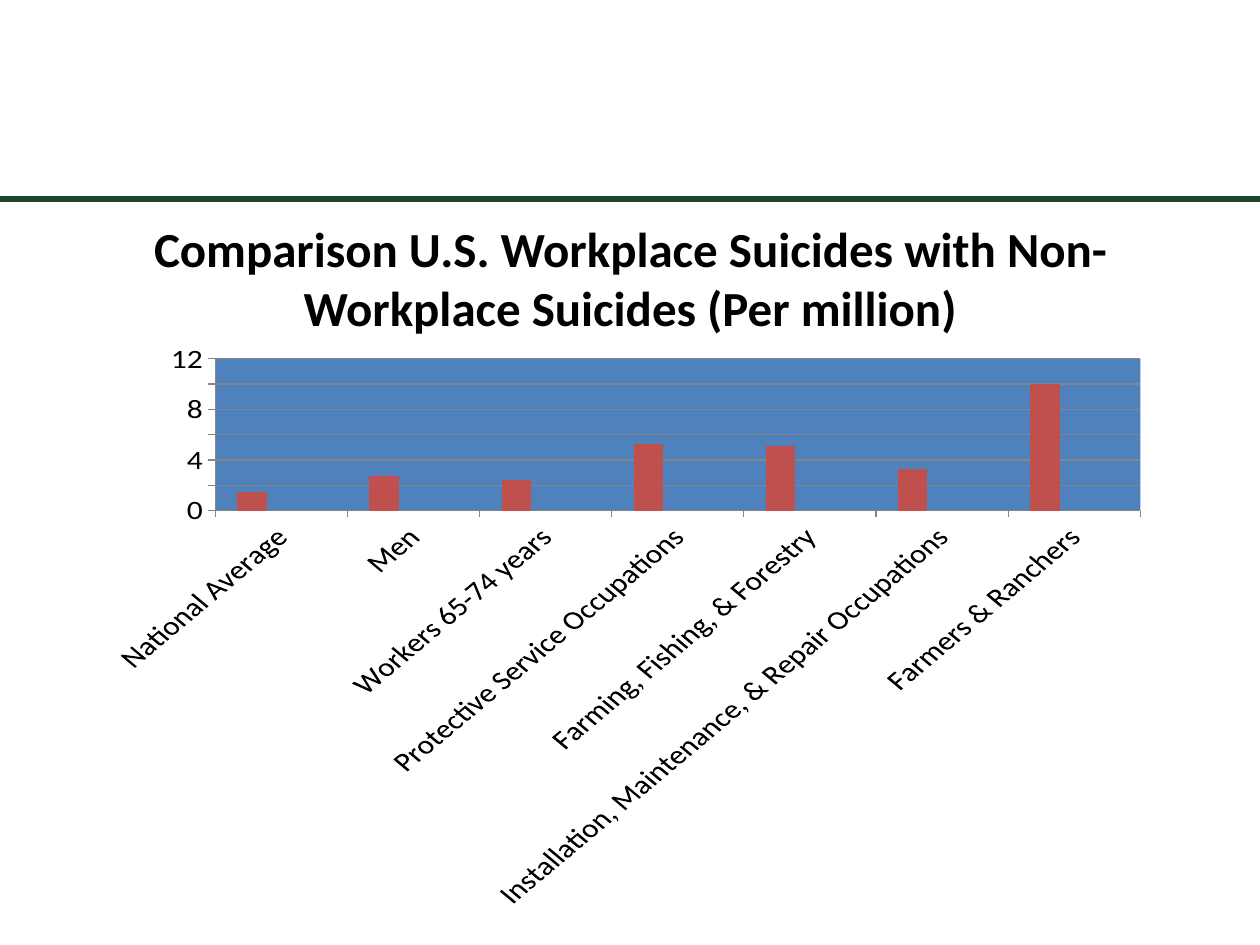
from pptx import Presentation
from pptx.chart.data import CategoryChartData
from pptx.dml.color import RGBColor
from pptx.enum.chart import XL_CHART_TYPE, XL_TICK_MARK
from pptx.enum.shapes import MSO_CONNECTOR
from pptx.enum.text import MSO_ANCHOR, PP_ALIGN
from pptx.oxml import parse_xml
from pptx.oxml.ns import nsdecls
from pptx.util import Cm, Pt

COLUMNS = XL_CHART_TYPE.COLUMN_CLUSTERED
TICK_OUTSIDE = XL_TICK_MARK.OUTSIDE
STRAIGHT = MSO_CONNECTOR.STRAIGHT
CENTER, MIDDLE = PP_ALIGN.CENTER, MSO_ANCHOR.MIDDLE

BLACK = RGBColor(0x00, 0x00, 0x00)
GREEN = RGBColor(0x1E, 0x46, 0x2D)
BLUE = RGBColor(0x4F, 0x81, 0xBD)
RED = RGBColor(0xC0, 0x50, 0x4D)
LIME = RGBColor(0x9B, 0xBB, 0x59)
GRAY = RGBColor(0x86, 0x86, 0x86)

HEADING = "Comparison U.S. Workplace Suicides with Non-Workplace Suicides (Per million)"
RATES = {
    "National Average": 1.5,
    "Men": 2.7,
    "Workers 65-74 years": 2.4,
    "Protective Service Occupations": 5.3,
    "Farming, Fishing, & Forestry": 5.1,
    "Installation, Maintenance, & Repair Occupations": 3.3,
    "Farmers & Ranchers": 10,
}
NO_RATES = [None] * len(RATES)
SERIES = [
    ("Series 1", list(RATES.values()), RED),
    ("Series 2", NO_RATES, RED),
    ("Series 3", NO_RATES, LIME),
]
HEADING_FONT = {"name": "Calibri", "size": Pt(28), "bold": True}
CHART_FONT = {"name": "Calibri", "size": Pt(18), "bold": False}
VALUE_SCALE = {"minimum_scale": 0, "maximum_scale": 12, "major_unit": 2}

SLIDE_W, SLIDE_H = Cm(25.4), Cm(19.05)
RULE_Y = Cm(4.01)


def set_all(target, values):
    for attribute, value in values.items():
        setattr(target, attribute, value)


def add_rule(slide):
    rule = slide.shapes.add_connector(STRAIGHT, 0, RULE_Y, SLIDE_W, RULE_Y)
    rule.line.color.rgb = GREEN
    rule.line.width = Pt(3)
    rule._element.spPr.append(parse_xml(f"<a:effectLst {nsdecls('a')}/>"))


def format_heading(title):
    set_all(title, {"left": Cm(1.27), "top": RULE_Y,
                    "width": Cm(22.86), "height": Cm(3.18)})
    frame = title.text_frame
    frame.text = HEADING
    set_all(frame, {"word_wrap": True, "vertical_anchor": MIDDLE})
    paragraph = frame.paragraphs[0]
    paragraph.alignment = CENTER
    set_all(paragraph.font, HEADING_FONT)
    paragraph.font.color.rgb = BLACK


def fill_plot_area(chart):
    """Colour the plot background, which has no public method."""
    plot_area = chart._chartSpace.chart.plotArea
    plot_area.append(parse_xml(
        f"<c:spPr {nsdecls('c', 'a')}><a:solidFill>"
        f'<a:srgbClr val="{BLUE}"/></a:solidFill></c:spPr>'))


def add_rates_chart(slide):
    data = CategoryChartData()
    data.categories = list(RATES)
    for name, values, _ in SERIES:
        data.add_series(name, values)
    chart = slide.shapes.add_chart(
        COLUMNS, Cm(1.83), Cm(6.91), Cm(21.59), Cm(11.43), data).chart
    set_all(chart, {"has_legend": False, "has_title": False})
    set_all(chart.font, CHART_FONT)
    chart.font.color.rgb = BLACK

    plot = chart.plots[0]
    set_all(plot, {"gap_width": 150, "overlap": 0, "vary_by_categories": False})
    for series, (_, _, color) in zip(plot.series, SERIES):
        series.format.fill.solid()
        series.format.fill.fore_color.rgb = color

    set_all(chart.value_axis, VALUE_SCALE)
    chart.value_axis.major_gridlines.format.line.color.rgb = GRAY
    for axis in (chart.category_axis, chart.value_axis):
        axis.major_tick_mark = TICK_OUTSIDE
        axis.format.line.color.rgb = GRAY
    fill_plot_area(chart)


def main():
    deck = Presentation()
    set_all(deck, {"slide_width": SLIDE_W, "slide_height": SLIDE_H})
    slide = deck.slides.add_slide(deck.slide_layouts[5])
    add_rule(slide)
    format_heading(slide.shapes.title)
    add_rates_chart(slide)
    deck.save("out.pptx")


if __name__ == "__main__":
    main()
